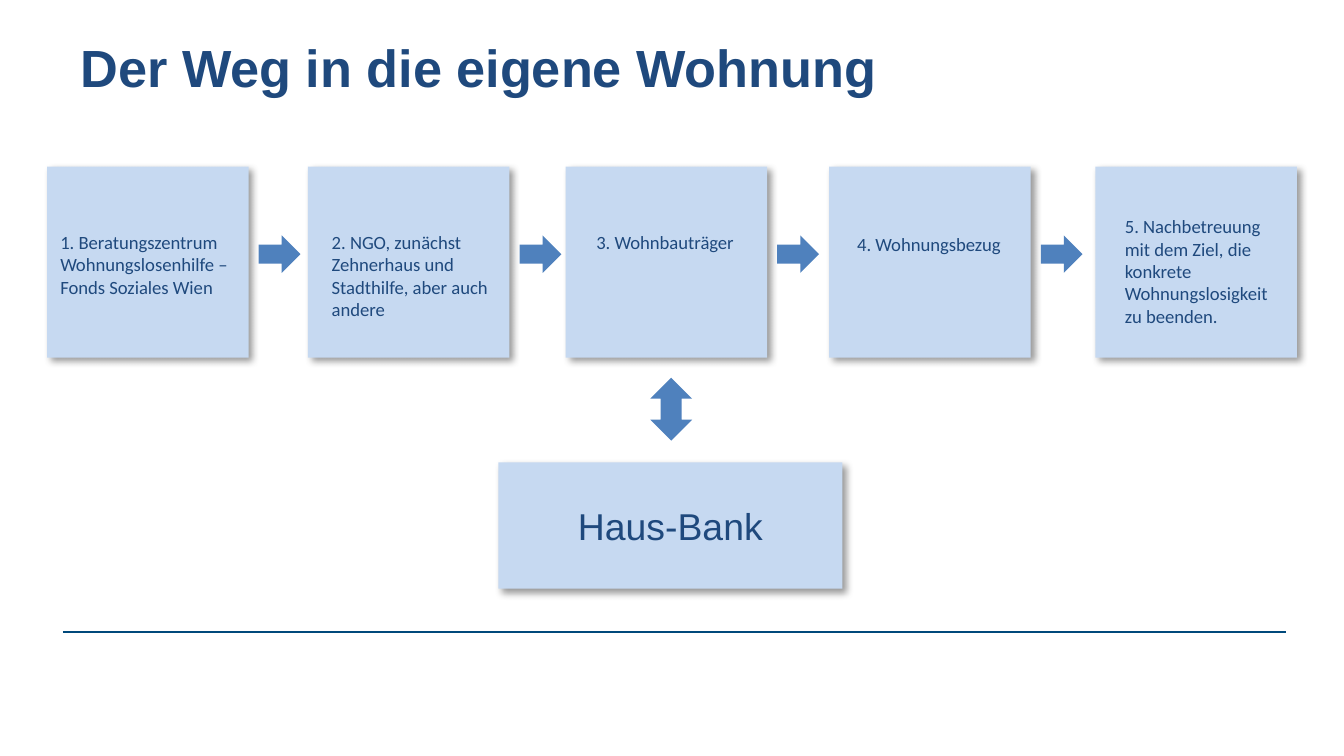
from dataclasses import dataclass

from lxml import etree
from pptx import Presentation
from pptx.dml.color import RGBColor
from pptx.enum.shapes import MSO_CONNECTOR, MSO_SHAPE
from pptx.enum.text import MSO_ANCHOR, MSO_AUTO_SIZE, PP_ALIGN
from pptx.oxml.ns import qn
from pptx.util import Cm, Pt

RECTANGLE = MSO_SHAPE.RECTANGLE
RIGHT_ARROW = MSO_SHAPE.RIGHT_ARROW
UP_DOWN_ARROW = MSO_SHAPE.UP_DOWN_ARROW
STRAIGHT = MSO_CONNECTOR.STRAIGHT
MIDDLE = MSO_ANCHOR.MIDDLE
LEFT, CENTER = PP_ALIGN.LEFT, PP_ALIGN.CENTER
NO_FIT, GROW = MSO_AUTO_SIZE.NONE, MSO_AUTO_SIZE.SHAPE_TO_FIT_TEXT

INK, CARD_FILL, ARROW_FILL, RULE = "1F497D", "C6D9F1", "4F81BD", "00497B"
TITLE_ONLY = 5


@dataclass
class Area:
    """Position and size in centimetres."""
    left: float
    top: float
    width: float
    height: float

    def lengths(self):
        return Cm(self.left), Cm(self.top), Cm(self.width), Cm(self.height)


@dataclass
class Step:
    card_left: float
    label: Area
    text: str


CARD_TOP, CARD_WIDTH, CARD_HEIGHT = 3.15, 3.81, 3.61
ARROW_GAP = 0.19
STEPS = [
    Step(0.89, Area(0.89, 4.24, 4.04, 1.7),
         "1. Beratungszentrum Wohnungslosenhilfe – Fonds Soziales Wien"),
    Step(5.82, Area(6.02, 4.24, 3.58, 1.96),
         "2. NGO, zunächst Zehnerhaus und Stadthilfe, aber auch andere"),
    Step(10.69, Area(11.02, 4.24, 3.28, 0.69), "3. Wohnbauträger"),
    Step(15.67, Area(15.95, 4.27, 3.28, 0.69), "4. Wohnungsbezug"),
    Step(20.7, Area(21.01, 3.94, 3.28, 2.39),
         "5. Nachbetreuung mit dem Ziel, die konkrete Wohnungslosigkeit zu beenden."),
]


def color(value: str) -> RGBColor:
    return RGBColor.from_string(value)


def write(frame, text: str, font: str, size: int, align=LEFT, bold=False) -> None:
    frame.word_wrap = True
    frame.text = text
    paragraph = frame.paragraphs[0]
    paragraph.alignment = align
    paragraph.font.name = font
    paragraph.font.size = Pt(size)
    paragraph.font.bold = bold
    paragraph.font.color.rgb = color(INK)


def add_block(slide, kind, area: Area, fill: str):
    block = slide.shapes.add_shape(kind, *area.lengths())
    block.shadow.inherit = False
    block.fill.solid()
    block.fill.fore_color.rgb = color(fill)
    block.line.fill.background()
    return block


def add_card(slide, area: Area):
    card = add_block(slide, RECTANGLE, area, CARD_FILL)
    # Soft shadow to the lower right
    effects = card._element.spPr.find(qn("a:effectLst"))
    shadow = etree.SubElement(effects, qn("a:outerShdw"), blurRad=str(Pt(4)),
                              dist=str(Pt(3)), dir="2700000", algn="tl", rotWithShape="0")
    black = etree.SubElement(shadow, qn("a:srgbClr"), val="000000")
    etree.SubElement(black, qn("a:alpha"), val="40000")
    return card


def add_label(slide, step: Step) -> None:
    box = slide.shapes.add_textbox(*step.label.lengths())
    write(box.text_frame, step.text, "Calibri", 10)
    box.text_frame.auto_size = GROW


def add_rule(slide, left: float, right: float, top: float) -> None:
    rule = slide.shapes.add_connector(STRAIGHT, Cm(left), Cm(top), Cm(right), Cm(top))
    rule.line.color.rgb = color(RULE)
    rule.line.width = Pt(1)
    etree.SubElement(rule._element.spPr, qn("a:effectLst"))


def main() -> None:
    deck = Presentation()
    deck.slide_width, deck.slide_height = Cm(25.4), Cm(14.29)
    slide = deck.slides.add_slide(deck.slide_layouts[TITLE_ONLY])

    # Title
    title = slide.shapes.title
    title.left, title.top, title.width, title.height = Area(1.27, 0.58, 22.86, 1.37).lengths()
    write(title.text_frame, "Der Weg in die eigene Wohnung", "Arial", 28, bold=True)
    title.text_frame.auto_size = NO_FIT
    title.text_frame.vertical_anchor = MIDDLE

    # Footer rule
    add_rule(slide, 1.19, 24.31, 11.94)

    # Five steps, joined by arrows
    for step in STEPS:
        add_card(slide, Area(step.card_left, CARD_TOP, CARD_WIDTH, CARD_HEIGHT))
        add_label(slide, step)
    for step in STEPS[:-1]:
        arrow_left = step.card_left + CARD_WIDTH + ARROW_GAP
        add_block(slide, RIGHT_ARROW, Area(arrow_left, 4.45, 0.79, 0.71), ARROW_FILL)

    # Bank below the third step
    add_block(slide, UP_DOWN_ARROW, Area(12.29, 7.14, 0.79, 1.19), ARROW_FILL)
    bank = add_card(slide, Area(9.42, 8.74, 6.5, 2.39))
    write(bank.text_frame, "Haus-Bank", "Arial", 20, CENTER)
    bank.text_frame.vertical_anchor = MIDDLE

    deck.save("out.pptx")


if __name__ == "__main__":
    main()
